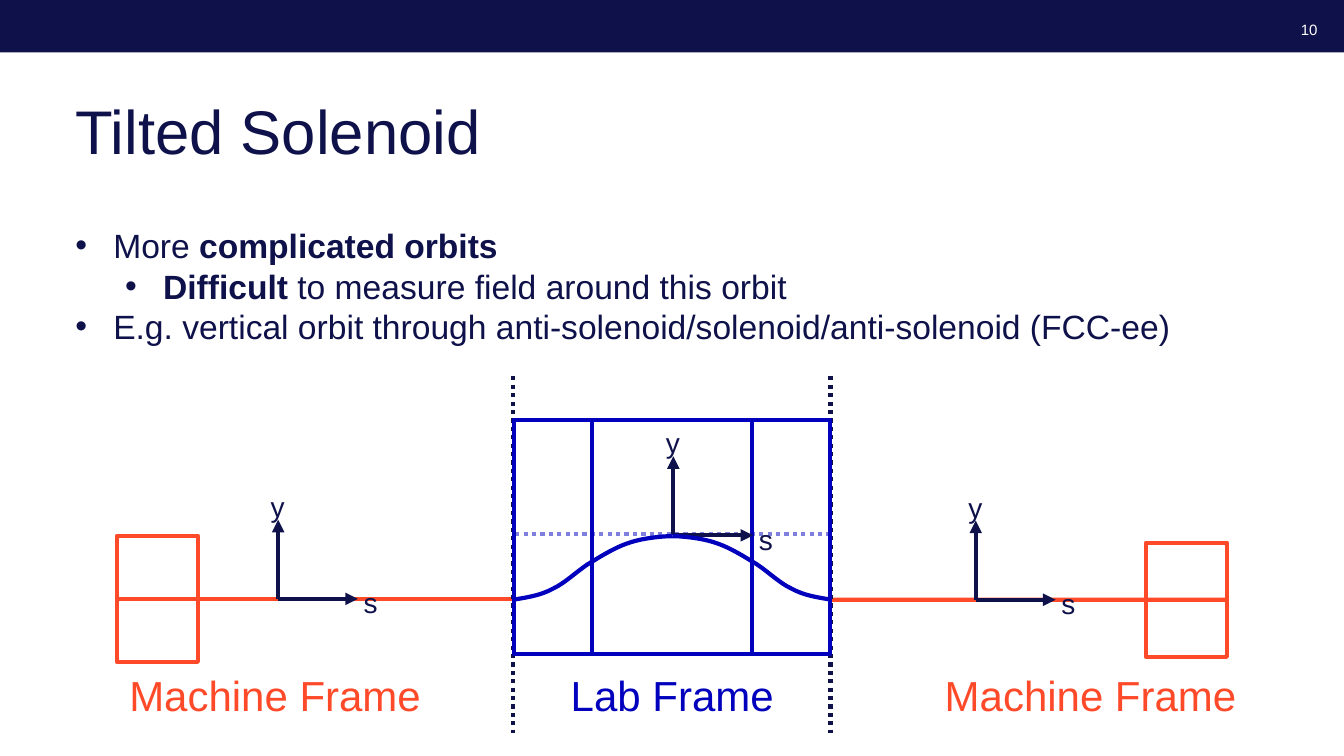
"""Build the Tilted Solenoid slide with its orbit and reference frame diagram."""
from lxml.etree import SubElement
from pptx import Presentation
from pptx.dml.color import RGBColor
from pptx.enum.dml import MSO_LINE
from pptx.enum.shapes import MSO_CONNECTOR, MSO_SHAPE
from pptx.enum.text import MSO_ANCHOR, PP_ALIGN
from pptx.oxml.ns import qn
from pptx.util import Pt

NAVY = RGBColor(0x0F, 0x12, 0x4A)
BLUE = RGBColor(0x00, 0x00, 0xBD)
PALE_BLUE = RGBColor(0x7F, 0x7F, 0xDD)
ORANGE = RGBColor(0xFF, 0x4A, 0x29)
WHITE = RGBColor(0xFF, 0xFF, 0xFF)

ORBIT_BENDS = [(0, 0), (7.2, 0), (20.2, 1.4), (29.5, 4.3), (38.9, 7.2), (47.5, 12.2),
               (56.9, 18), (66.2, 23), (75.6, 33.1), (85, 37.4), (94.3, 42.5),
               (104.4, 43.9), (113.8, 45.4)]


def assign(target, values):
    for key, value in values.items():
        setattr(target, key, value)


def bezier(a, b, c, d, t):
    u = 1 - t
    return u**3 * a + 3 * u * u * t * b + 3 * u * t * t * c + t**3 * d


class Sketch:
    """Holds the slide and its drawing style."""

    def __init__(self, slide, font="Arial", weight=3):
        self.slide, self.font, self.weight = slide, font, weight

    def fill_text(self, frame, paragraphs, size, color, spacing, align=PP_ALIGN.LEFT,
                  anchor=MSO_ANCHOR.TOP):
        assign(frame, {"word_wrap": True, "vertical_anchor": anchor})
        for i, (level, runs) in enumerate(paragraphs):
            paragraph = frame.add_paragraph() if i else frame.paragraphs[0]
            if level is not None:
                self.bullet(paragraph, level)
            assign(paragraph, {"alignment": align, "line_spacing": Pt(spacing),
                               "space_before": Pt(0), "space_after": Pt(0)})
            for words, bold in runs:
                run = paragraph.add_run()
                run.text = words
                assign(run.font, {"name": self.font, "size": Pt(size), "bold": bold})
                run.font.color.rgb = color

    def bullet(self, paragraph, level):
        paragraph.level = level
        props = paragraph._p.get_or_add_pPr()
        props.set("marL", str(Pt(27 + 35.6 * level)))
        props.set("indent", str(Pt(-27)))
        SubElement(props, qn("a:buFont")).set("typeface", self.font)
        SubElement(props, qn("a:buChar")).set("char", "•")

    def title(self, words, box, **style):
        heading = self.slide.shapes.title
        assign(heading, dict(zip(("left", "top", "width", "height"), map(Pt, box))))
        self.fill_text(heading.text_frame, [(None, [(words, False)])], **style)

    def text(self, paragraphs, box, group=None, **style):
        area = (group or self.slide).shapes.add_textbox(*map(Pt, box))
        self.fill_text(area.text_frame, paragraphs, **style)

    def label(self, words, box, group=None, **style):
        self.text([(None, [(words, False)])], box, group, **style)

    def stroke(self, line, color):
        line.color.rgb = color
        line.width = Pt(self.weight)

    def box(self, box, outline=None, fill=None):
        rect = self.slide.shapes.add_shape(MSO_SHAPE.RECTANGLE, *map(Pt, box))
        rect.shadow.inherit = False
        if fill is None:
            rect.fill.background()
        else:
            rect.fill.solid()
            rect.fill.fore_color.rgb = fill
        if outline is None:
            rect.line.fill.background()
        else:
            self.stroke(rect.line, outline)
        return rect

    def line(self, x1, y1, x2, y2, color, group=None, dotted=False, arrow=False):
        link = (group or self.slide).shapes.add_connector(
            MSO_CONNECTOR.STRAIGHT, *map(Pt, (x1, y1, x2, y2)))
        self.stroke(link.line, color)
        if dotted:
            link.line.dash_style = MSO_LINE.ROUND_DOT
        props = link._element.spPr
        if arrow:
            SubElement(props.find(qn("a:ln")), qn("a:tailEnd")).set("type", "triangle")
        SubElement(props, qn("a:effectLst"))
        return link

    def axes(self, x, y):
        group = self.slide.shapes.add_group_shape()
        style = {"size": 20, "color": NAVY, "spacing": 37}
        self.line(x, y, x + 57, y, NAVY, group, arrow=True)
        self.line(x, y, x, y - 56.5, NAVY, group, arrow=True)
        self.label("s", (x + 54, y - 26, 39, 39.6), group, **style)
        self.label("y", (x - 19.8, y - 94.7, 39, 39.6), group, align=PP_ALIGN.CENTER, **style)

    def orbit(self, x, y, side, steps=8):
        points = []
        for start in range(0, len(ORBIT_BENDS) - 1, 3):
            xs, ys = zip(*ORBIT_BENDS[start:start + 4])
            for step in range(1, steps + 1):
                t = step / steps
                points.append((Pt(x + side * bezier(*xs, t)), Pt(y + bezier(*ys, t))))
        builder = self.slide.shapes.build_freeform(Pt(x), Pt(y))
        builder.add_line_segments(points, close=False)
        curve = builder.convert_to_shape()
        curve.shadow.inherit = False
        curve.fill.background()
        self.stroke(curve.line, BLUE)


def main():
    deck = Presentation()
    assign(deck, {"slide_width": Pt(960), "slide_height": Pt(540)})
    sketch = Sketch(deck.slides.add_slide(deck.slide_layouts[5]))

    sketch.box((0, 0, 960, 37.5), fill=NAVY)
    sketch.label("10", (918, 10, 30.2, 18), size=10.7, color=WHITE, spacing=16.5,
                 align=PP_ALIGN.RIGHT, anchor=MSO_ANCHOR.MIDDLE)
    sketch.title("Tilted Solenoid", (46.8, 60.5, 867.6, 84.2), size=44, color=NAVY, spacing=55)
    sketch.text([
        (0, [("More ", False), ("complicated orbits", True)]),
        (1, [("Difficult ", True), ("to measure field around this orbit", False)]),
        (0, [("E.g. vertical orbit through anti-solenoid/solenoid/anti-solenoid (FCC-ee)", False)]),
    ], (46.8, 157, 867.6, 92.9), size=24, color=NAVY, spacing=29)

    lab_left, lab_right = 366.7, 593.3
    sketch.line(lab_right, 381.4, lab_left, 381.4, PALE_BLUE, dotted=True)
    sketch.box((422.6, 300.2, 114.5, 167), BLUE)

    left_magnet = sketch.box((83.5, 382.8, 57.8, 90), ORANGE)
    right_magnet = sketch.box((818.6, 387.6, 57.8, 81.6), ORANGE)
    left_beam = sketch.line(83.5, 427.8, lab_left, 427.8, ORANGE)
    left_beam.begin_connect(left_magnet, 1)
    right_beam = sketch.line(lab_right, 428.4, 876.4, 428.4, ORANGE)
    right_beam.end_connect(right_magnet, 3)

    for origin in ((481, 382.4), (697, 428.4), (198.7, 427.8)):
        sketch.axes(*origin)
    for border in (lab_left, lab_right):
        sketch.line(border, 268.8, border, 523.8, NAVY, dotted=True)
    for words, left, color in (("Machine Frame", 82.8, ORANGE), ("Lab Frame", 366.5, BLUE),
                               ("Machine Frame", 665.3, ORANGE)):
        sketch.label(words, (left, 473.8, 227.5, 42.5), size=30, color=color, spacing=37,
                     align=PP_ALIGN.CENTER)

    sketch.box((367, 300.2, 226, 167), BLUE)
    for side in (1, -1):
        sketch.orbit(480.2, 383, side)
    deck.save("out.pptx")


if __name__ == "__main__":
    main()
